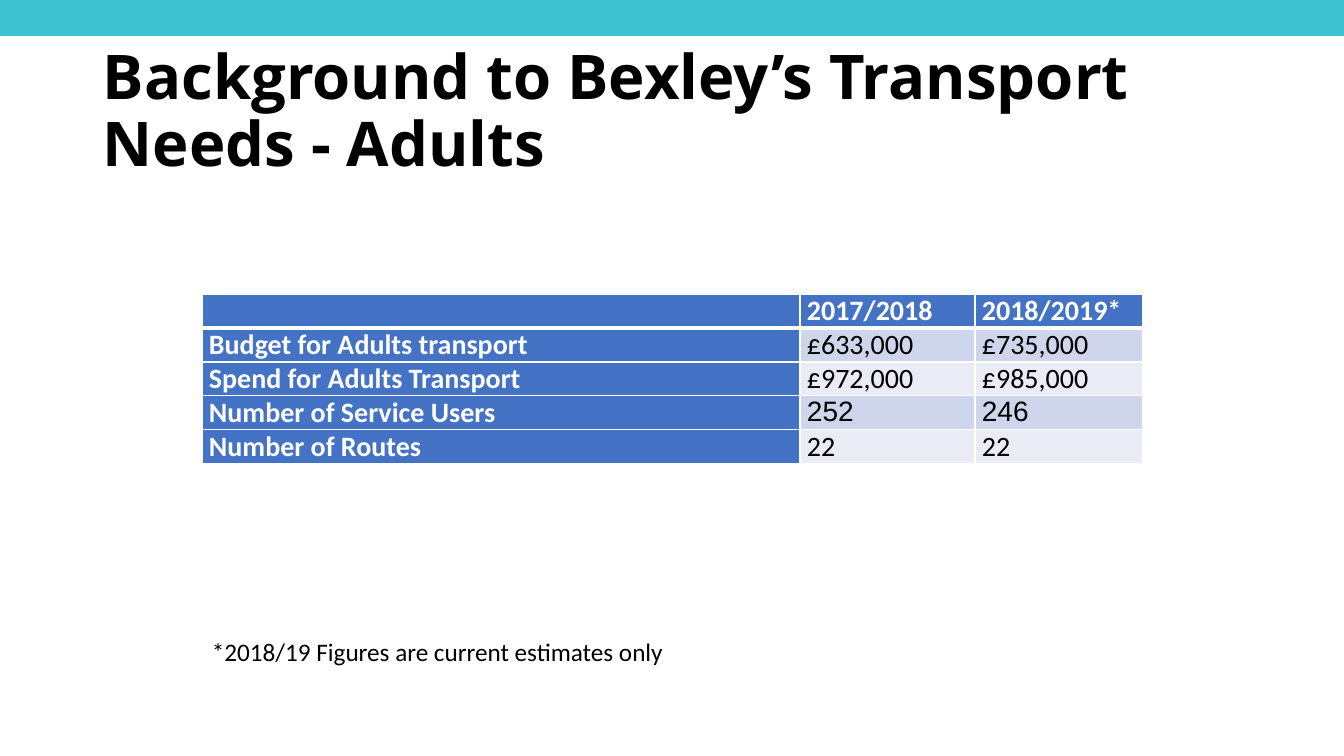
from lxml import etree
from pptx import Presentation
from pptx.dml.color import RGBColor
from pptx.enum.shapes import MSO_SHAPE
from pptx.enum.text import MSO_ANCHOR
from pptx.oxml.ns import qn
from pptx.util import Pt

RECT = MSO_SHAPE.RECTANGLE
TOP = MSO_ANCHOR.TOP
MIDDLE = MSO_ANCHOR.MIDDLE

TEAL = RGBColor(0x3E, 0xC2, 0xCF)
BLUE = RGBColor(0x44, 0x72, 0xC4)
MIST = RGBColor(0xCF, 0xD5, 0xEA)
PALE = RGBColor(0xE9, 0xEB, 0xF5)
WHITE = RGBColor(0xFF, 0xFF, 0xFF)
BLACK = RGBColor(0x00, 0x00, 0x00)

SCALE = 9071.43
ROWS = [
    ["", "2017/2018", "2018/2019*"],
    ["Budget for Adults transport", "£633,000", "£735,000"],
    ["Spend for Adults Transport", "£972,000", "£985,000"],
    ["Number of Service Users", "252", "246"],
    ["Number of Routes", "22", "22"],
]
USERS = 3


def px(n):
    return round(n * SCALE)


class Page:
    """Holds the style and the current slide, and draws each kind of element."""

    font = "Calibri"

    def __init__(self, deck):
        self.slide = deck.slides.add_slide(deck.slide_layouts[6])
        self.shapes = self.slide.shapes

    def style(self, frame, size, color, bold=False, font=None):
        for run in frame.paragraphs[0].runs:
            run.font.name = font or self.font
            run.font.size = Pt(size)
            run.font.bold = bold
            run.font.color.rgb = color

    def band(self, box, color):
        shape = self.shapes.add_shape(RECT, *map(px, box))
        shape.shadow.inherit = False
        shape.fill.solid()
        shape.fill.fore_color.rgb = color
        shape.line.fill.background()

    def text(self, box, words, size, bold=False, font=None,
             wrap=True, anchor=TOP, lead=1.0):
        frame = self.shapes.add_textbox(*map(px, box)).text_frame
        frame.word_wrap = wrap
        frame.vertical_anchor = anchor
        frame.text = words
        frame.paragraphs[0].line_spacing = lead
        self.style(frame, size, BLACK, bold, font)

    def edges(self, cell, top, bottom):
        props = cell._tc.get_or_add_tcPr()
        sides = [("L", 1), ("R", 1), ("T", top), ("B", bottom)]
        for at, (side, width) in enumerate(sides):
            line = etree.Element(qn("a:ln" + side), w=str(Pt(width)))
            fill = etree.SubElement(line, qn("a:solidFill"))
            etree.SubElement(fill, qn("a:srgbClr"), val=str(WHITE))
            props.insert(at, line)

    def cell(self, cell, words, row, col):
        head = row == 0 or col == 0
        cell.margin_left = cell.margin_right = px(7)
        cell.margin_top = cell.margin_bottom = 0
        cell.fill.solid()
        cell.fill.fore_color.rgb = BLUE if head else MIST if row % 2 else PALE
        self.edges(cell, 3 if row == 1 else 1, 3 if row == 0 else 1)
        cell.text_frame.text = words
        font = "Arial" if row == USERS and not head else None
        self.style(cell.text_frame, 20, WHITE if head else BLACK, head, font)

    def table(self, left, top, widths, height, rows):
        box = (left, top, sum(widths), height * len(rows))
        table = self.shapes.add_table(
            len(rows), len(widths), *map(px, box)).table
        for column, width in zip(table.columns, widths):
            column.width = px(width)
        for r, row in enumerate(rows):
            table.rows[r].height = px(height)
            for c, words in enumerate(row):
                self.cell(table.cell(r, c), words, r, c)


def main():
    deck = Presentation()
    deck.slide_width, deck.slide_height = px(1344), px(756)
    page = Page(deck)
    page.band((0, 0, 1344, 36), TEAL)
    page.text((93, 40, 1159, 146), "Background to Bexley’s Transport Needs - Adults",
              44, bold=True, font="Open Sans", anchor=MIDDLE, lead=0.9)
    page.table(202, 294, [598, 175, 168], 34, ROWS)
    page.text((202, 631, 477, 40), "*2018/19 Figures are current estimates only",
              18, wrap=False)
    deck.save("out.pptx")


if __name__ == "__main__":
    main()
